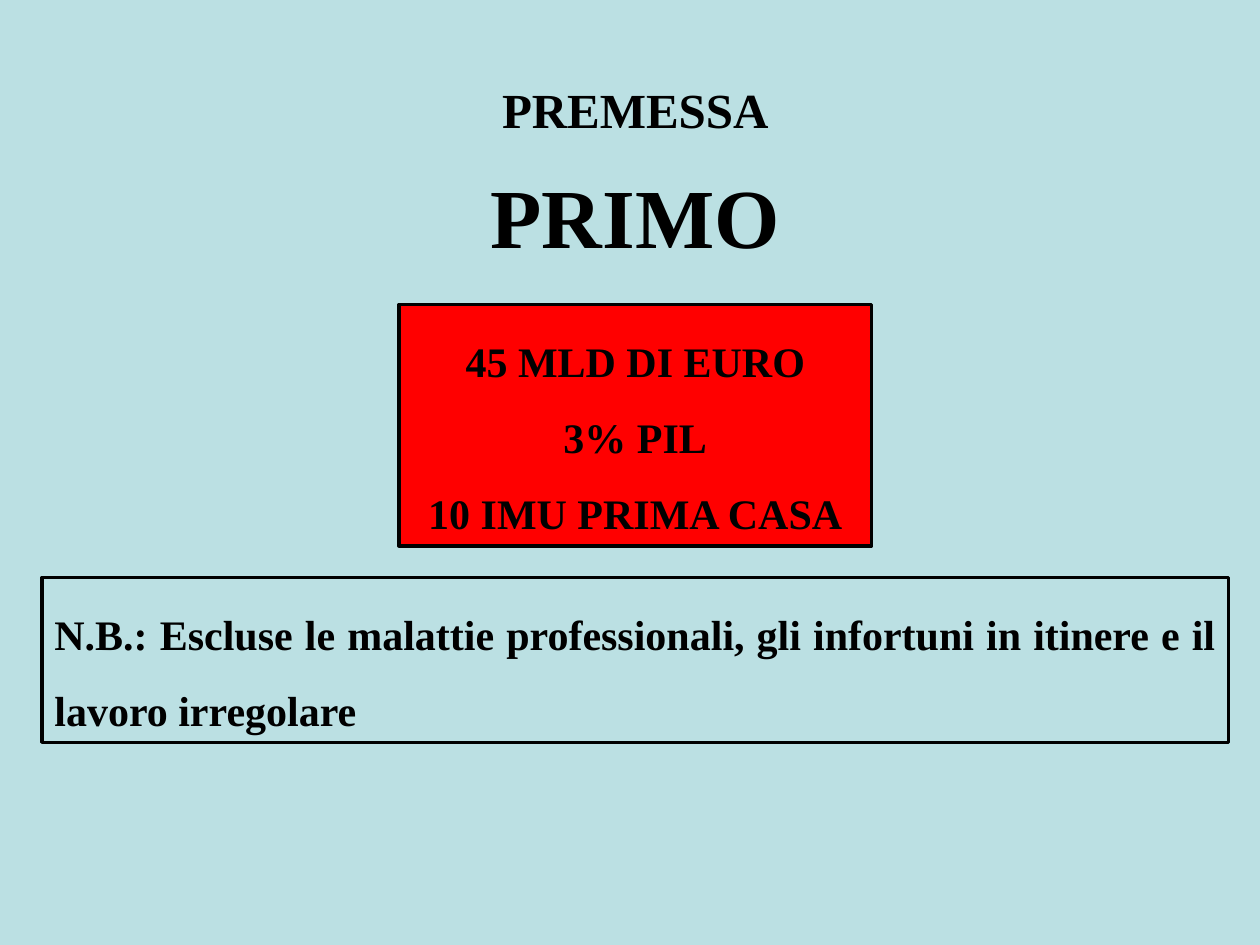
from lxml import etree
from pptx import Presentation, util as u
from pptx.dml.color import RGBColor
from pptx.enum import shapes, text
from pptx.oxml.ns import qn

BLACK = RGBColor(0x00, 0x00, 0x00)
RED = RGBColor(0xFF, 0x00, 0x00)
PALE_BLUE = RGBColor(0xBB, 0xE0, 0xE3)
FONT = "Times New Roman"
CENTER, JUSTIFY = text.PP_ALIGN.CENTER, text.PP_ALIGN.JUSTIFY
MIDDLE, TOP = text.MSO_ANCHOR.MIDDLE, text.MSO_ANCHOR.TOP

prs = Presentation()
prs.slide_width, prs.slide_height = u.Inches(10), u.Inches(7.5)
s = prs.slides.add_slide(prs.slide_layouts[5])
s.background.fill.solid()
s.background.fill.fore_color.rgb = PALE_BLUE

# Grid of 120 columns by 90 rows
COL, ROW = prs.slide_width / 120, prs.slide_height / 90


def grid(left, top, width, height):
    return [int(n * unit) for n, unit in
            zip((left, top, width, height), (COL, ROW, COL, ROW))]


def write(sp, lines, size, align=CENTER, anchor=MIDDLE, spacing=1.0):
    tf = sp.text_frame
    tf.text = "\n".join(lines)
    tf.word_wrap = True
    tf.auto_size = text.MSO_AUTO_SIZE.SHAPE_TO_FIT_TEXT
    tf.vertical_anchor = anchor
    for p in tf.paragraphs:
        p.alignment, p.line_spacing = align, spacing
        p.font.name, p.font.size, p.font.bold = FONT, u.Pt(size), True
        p.font.color.rgb = BLACK


# Title with text shadow
title = s.shapes.title
title.left, title.top, title.width, title.height = grid(8, 15, 105, 11)
write(title, ["PRIMO"], 48)
r = title.text_frame.paragraphs[0].runs[0]
effects = etree.SubElement(r.font._element, qn("a:effectLst"))
shadow = etree.SubElement(effects, qn("a:outerShdw"),
                          blurRad="38100", dist="38100", dir="2700000")
etree.SubElement(shadow, qn("a:srgbClr"), val="808080")

# Framed boxes: note and key figures
boxes = [
    (grid(4, 55, 113, 15.7), None, JUSTIFY,
     ["N.B.: Escluse le malattie professionali, gli infortuni in itinere "
      "e il lavoro irregolare"]),
    (grid(38, 29, 45, 23), RED, CENTER,
     ["45 MLD DI EURO", "3% PIL", "10 IMU PRIMA CASA"]),
]
for place, fill, align, lines in boxes:
    sp = s.shapes.add_shape(shapes.MSO_SHAPE.RECTANGLE, *place)
    sp.shadow.inherit = False
    if fill is None:
        sp.fill.background()
    else:
        sp.fill.solid()
        sp.fill.fore_color.rgb = fill
    sp.line.color.rgb, sp.line.width = BLACK, u.Pt(2)
    write(sp, lines, 24, align, TOP, 1.5)

# Heading above the title
heading = s.shapes.add_textbox(*grid(8, 7, 105, 6.8))
write(heading, ["PREMESSA"], 28)

prs.save("out.pptx")
